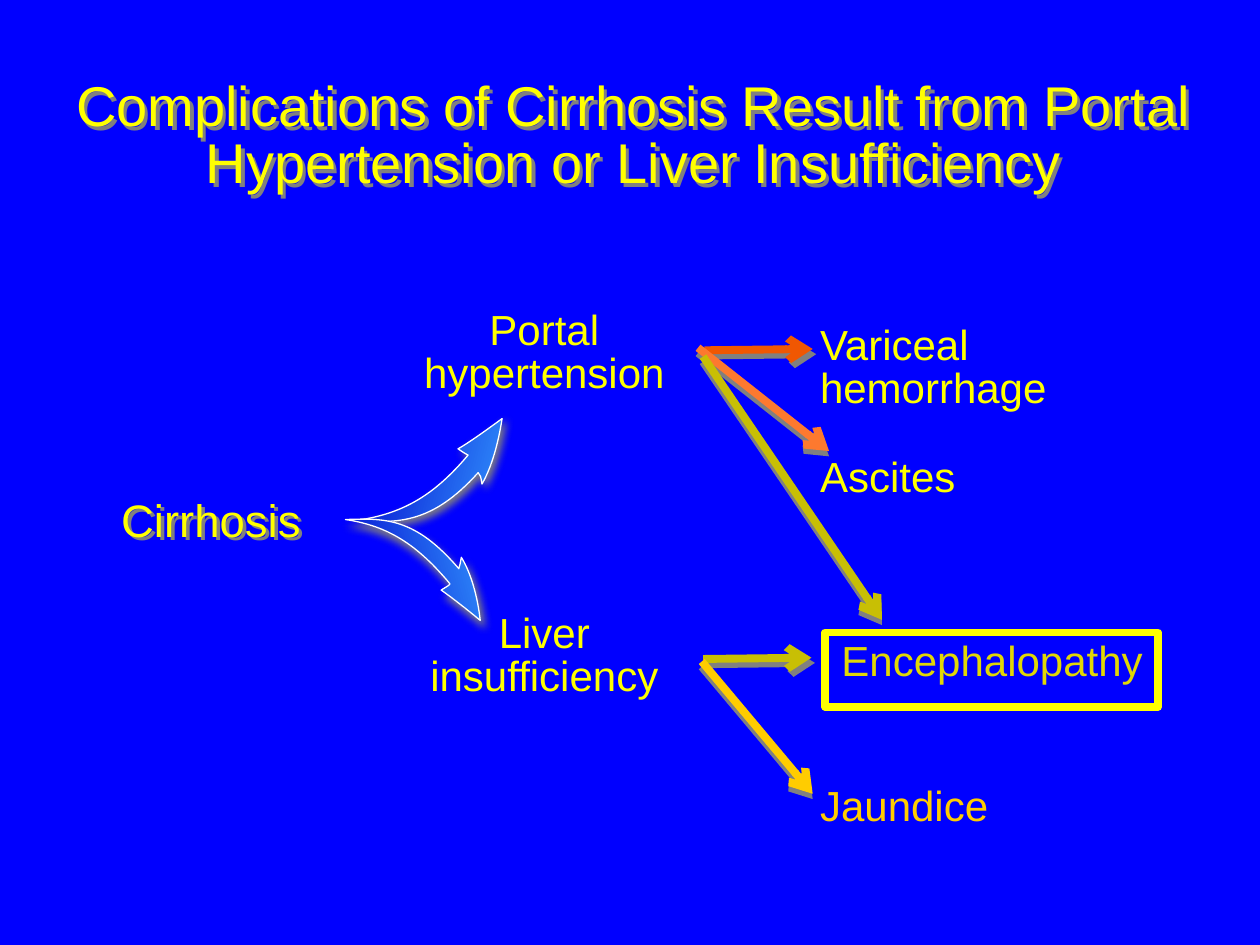
import math
from lxml import etree
from pptx import Presentation
from pptx.dml.color import RGBColor
from pptx.enum.shapes import MSO_CONNECTOR, MSO_SHAPE
from pptx.enum.text import MSO_ANCHOR, MSO_AUTO_SIZE, PP_ALIGN
from pptx.oxml.ns import qn
from pptx.util import Inches, Pt

LEFT, CENTER = PP_ALIGN.LEFT, PP_ALIGN.CENTER
TOP, MIDDLE = MSO_ANCHOR.TOP, MSO_ANCHOR.MIDDLE
FIT_SHAPE, FIXED = MSO_AUTO_SIZE.SHAPE_TO_FIT_TEXT, MSO_AUTO_SIZE.NONE
RECTANGLE, STRAIGHT = MSO_SHAPE.RECTANGLE, MSO_CONNECTOR.STRAIGHT

BLUE = RGBColor(0x00, 0x00, 0xFF)
NAVY = RGBColor(0x00, 0x00, 0xCC)
SKY = RGBColor(0x33, 0x99, 0xFF)
WHITE = RGBColor(0xFF, 0xFF, 0xFF)
GRAY = RGBColor(0x80, 0x80, 0x80)
YELLOW = RGBColor(0xFF, 0xFF, 0x00)
MUSTARD = RGBColor(0xE1, 0xD7, 0x05)
OLIVE = RGBColor(0xC8, 0xBF, 0x04)
GOLD = RGBColor(0xFF, 0xCC, 0x00)
RED_ORANGE = RGBColor(0xF0, 0x57, 0x02)
ORANGE = RGBColor(0xFD, 0x79, 0x2F)

FONT = "Arial"
LINE_SPACING = 0.85
HEAVY = Pt(4.5)

TITLE = ("Complications of Cirrhosis Result from Portal Hypertension or Liver Insufficiency",
         (0.42, 0.47, 9.22, 1.25))
ROOT = ("Cirrhosis", (0.66, 3.92, 2.03, 0.49))
CAUSES = [("Portal hypertension", 2.42), ("Liver insufficiency", 4.83)]
OUTCOMES = [
    ("Variceal hemorrhage", 6.41, 2.54, 0.8, YELLOW),
    ("Ascites", 6.41, 3.59, 0.45, YELLOW),
    ("Encephalopathy", 6.58, 5.05, 0.45, MUSTARD),
    ("Jaundice", 6.41, 6.2, 0.45, GOLD),
]
TEXT_SHADOW = (0, 2.8, 45)
FLAT_SHADOW, STEEP_SHADOW = (0, 3.6, 56), (0, 3, 90)
ARROWS = [
    ((5.59, 2.78), (6.45, 2.77), RED_ORANGE, FLAT_SHADOW),
    ((5.54, 2.76), (6.58, 3.58), ORANGE, STEEP_SHADOW),
    ((5.58, 5.23), (6.44, 5.22), OLIVE, FLAT_SHADOW),
    ((5.58, 2.83), (7, 4.92), OLIVE, STEEP_SHADOW),
    ((5.57, 5.25), (6.45, 6.3), GOLD, STEEP_SHADOW),
]
SWOOSHES = [
    {"center": (3.41, 3.73), "turn": 14.9, "shadow": (5, 2.8, 45), "start": (2.81, 4.14),
     "curves": [((3.19, 4.09), (3.44, 3.94), (3.71, 3.62)),
                ((3.71, 3.62), (3.67, 3.6), (3.63, 3.57)),
                ((3.67, 3.55), (3.79, 3.47), (3.98, 3.33)),
                ((3.95, 3.52), (3.9, 3.71), (3.82, 3.85)),
                ((3.81, 3.79), (3.81, 3.78), (3.79, 3.76)),
                ((3.42, 4.17), (3.15, 4.16), (2.81, 4.14))]},
    {"center": (3.29, 4.52), "turn": 345.1, "shadow": (5, 4.5, 63), "start": (2.74, 4.12),
     "curves": [((3.08, 4.17), (3.31, 4.32), (3.57, 4.63)),
                ((3.57, 4.64), (3.53, 4.66), (3.5, 4.68)),
                ((3.53, 4.7), (3.64, 4.78), (3.81, 4.92)),
                ((3.79, 4.74), (3.74, 4.55), (3.66, 4.42)),
                ((3.65, 4.47), (3.65, 4.48), (3.64, 4.51)),
                ((3.29, 4.1), (3.05, 4.11), (2.74, 4.12))]},
]
HIGHLIGHT = (6.55, 5.02, 2.64, 0.59)


def add_shadow(shape, blur, distance, angle):
    effects = etree.SubElement(shape._element.spPr, qn("a:effectLst"))
    shadow = etree.SubElement(effects, qn("a:outerShdw"), blurRad=str(Pt(blur)),
                              dist=str(Pt(distance)), dir=str(angle * 60000),
                              algn="ctr", rotWithShape="0")
    etree.SubElement(shadow, qn("a:srgbClr"), val=str(GRAY))


def add_label(page, text, place, size=24, color=YELLOW, align=CENTER,
              anchor=TOP, fit=FIT_SHAPE):
    box = page.shapes.add_textbox(*map(Inches, place))
    frame = box.text_frame
    frame.text = text
    frame.word_wrap = True
    frame.auto_size = fit
    frame.vertical_anchor = anchor
    paragraph = frame.paragraphs[0]
    paragraph.alignment = align
    paragraph.line_spacing = LINE_SPACING
    span = paragraph.runs[0]
    span.font.size = Pt(size)
    span.font.name = FONT
    span.font.color.rgb = color
    return box


def add_arrow(page, start, end, color, shadow):
    arrow = page.shapes.add_connector(STRAIGHT, *map(Inches, start + end))
    arrow.line.color.rgb = color
    arrow.line.width = HEAVY
    etree.SubElement(arrow.line._get_or_add_ln(), qn("a:tailEnd"), type="arrow")
    add_shadow(arrow, *shadow)


def unturn(point, center, degrees):
    angle = math.radians(-degrees)
    x, y = point[0] - center[0], point[1] - center[1]
    return (Inches(center[0] + x * math.cos(angle) - y * math.sin(angle)),
            Inches(center[1] + x * math.sin(angle) + y * math.cos(angle)))


def bend_segments(shape):
    segments = list(shape._element.iter(qn("a:lnTo")))
    for index in range(0, len(segments), 3):
        curve = etree.Element(qn("a:cubicBezTo"))
        segments[index].addprevious(curve)
        for segment in segments[index:index + 3]:
            curve.append(segment[0])
            segment.getparent().remove(segment)


def add_swoosh(page, center, turn, shadow, start, curves):
    points = [unturn(point, center, turn) for curve in curves for point in curve]
    builder = page.shapes.build_freeform(*unturn(start, center, turn))
    builder.add_line_segments(points, close=True)
    swoosh = builder.convert_to_shape()
    bend_segments(swoosh)
    swoosh.left = Inches(center[0]) - swoosh.width // 2
    swoosh.top = Inches(center[1]) - swoosh.height // 2
    swoosh.rotation = turn
    swoosh.fill.gradient()
    swoosh.fill.gradient_angle = 0
    for stop, color, position in zip(swoosh.fill.gradient_stops, (NAVY, SKY), (0, 1)):
        stop.color.rgb = color
        stop.position = position
    swoosh.line.color.rgb = WHITE
    swoosh.line.width = Pt(0.75)
    add_shadow(swoosh, *shadow)


def main():
    deck = Presentation()
    deck.slide_width, deck.slide_height = Inches(10), Inches(7.5)
    page = deck.slides.add_slide(deck.slide_layouts[6])
    page.background.fill.solid()
    page.background.fill.fore_color.rgb = BLUE

    title = add_label(page, *TITLE, size=32, anchor=MIDDLE, fit=FIXED)
    root = add_label(page, *ROOT, size=26)
    for box in (title, root):
        add_shadow(box, *TEXT_SHADOW)
    for text, top in CAUSES:
        add_label(page, text, (3.06, top, 2.52, 0.8))
    for arrow in ARROWS:
        add_arrow(page, *arrow)
    for text, left, top, height, color in OUTCOMES:
        add_label(page, text, (left, top, 3.12, height), color=color, align=LEFT)
    for swoosh in SWOOSHES:
        add_swoosh(page, **swoosh)

    frame = page.shapes.add_shape(RECTANGLE, *map(Inches, HIGHLIGHT))
    frame.shadow.inherit = False
    frame.fill.background()
    frame.line.color.rgb = YELLOW
    frame.line.width = HEAVY
    deck.save("out.pptx")


if __name__ == "__main__":
    main()
